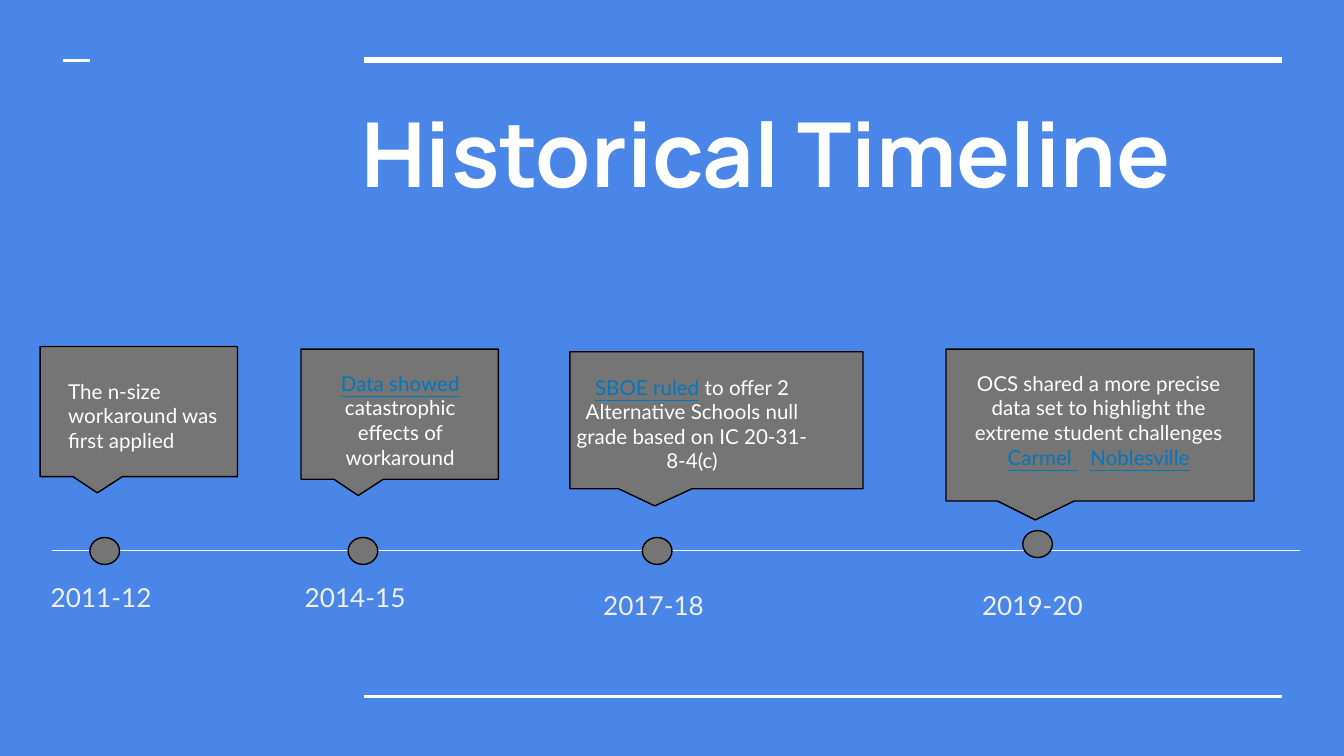
from dataclasses import dataclass

from lxml.etree import SubElement
from pptx import Presentation
from pptx.dml.color import RGBColor
from pptx.enum.shapes import MSO_CONNECTOR, MSO_SHAPE as Shape
from pptx.enum.text import MSO_ANCHOR, MSO_AUTO_SIZE, PP_ALIGN as Align
from pptx.oxml.ns import qn
from pptx.util import Cm, Pt

BLUE, GREY, BLACK, WHITE = "4A86E8", "757575", "000000", "FFFFFF"
LINK, AXIS, DATE = "0277BD", "F3F3F3", "EFEFEF"
Box = tuple[float, float, float, float]  # left, top, width, height in cm


@dataclass
class Run:
    text: str
    link: bool = False
    spacing: float = 0  # extra character spacing in points


@dataclass
class Event:
    date: str
    date_at: tuple[float, float]
    dot_at: tuple[float, float]
    callout: Box
    text_box: Box
    paragraphs: list[list[Run]]
    align: Align = Align.CENTER


EVENTS = [
    Event("2011-12", (0.71, 10.74), (1.7, 10.16),
          (0.76, 6.55, 3.73, 2.46), (1.04, 6.91, 3.86, 1.8),
          [[Run("The n-size workaround was first applied")]], Align.LEFT),
    Event("2014-15", (5.51, 10.74), (6.58, 10.16),
          (5.69, 6.6, 3.73, 2.46), (5.89, 6.76, 3.35, 2.06),
          [[Run("Data showed ", link=True),
            Run("catastrophic effects of workaround")]]),
    Event("2017-18", (11.15, 10.9), (12.14, 10.16),
          (10.77, 6.65, 5.54, 2.59), (10.59, 6.83, 4.98, 2.06),
          [[Run("SBOE ruled", link=True),
            Run(" to offer 2 Alternative Schools null grade "
                "based on IC 20-31-8-4(c)")]]),
    Event("2019-20", (18.31, 10.9), (19.33, 10.03),
          (17.88, 6.6, 5.82, 2.87), (17.88, 6.76, 5.77, 2.06),
          [[Run("OCS shared a more precise data set to highlight "
                "the extreme student challenges")],
           [Run("Carmel ", link=True), Run(" ", spacing=4.25),
            Run("Noblesville", link=True)]]),
]


def rgb(color: str) -> RGBColor:
    return RGBColor.from_string(color)


def cm(*lengths: float) -> list[Cm]:
    return [Cm(v) for v in lengths]


def add_line(slide, x1: float, x2: float, y: float, color: str, width: float):
    line = slide.shapes.add_connector(MSO_CONNECTOR.STRAIGHT, *cm(x1, y, x2, y))
    line.line.color.rgb = rgb(color)
    line.line.width = Pt(width)
    SubElement(line._element.spPr, qn("a:effectLst"))


def add_shape(slide, kind: Shape, box: Box):
    sp = slide.shapes.add_shape(kind, *cm(*box))
    sp.shadow.inherit = False
    sp.fill.solid()
    sp.fill.fore_color.rgb = rgb(GREY)
    sp.line.color.rgb = rgb(BLACK)
    sp.line.width = Pt(0.75)
    return sp


def add_run(p, text: str, font: str, size: float, color: str):
    r = p.add_run()
    r.text = text
    r.font.name = font
    r.font.size = Pt(size)
    r.font.color.rgb = rgb(color)
    return r


def format_frame(tf):
    tf.word_wrap = True
    tf.auto_size = MSO_AUTO_SIZE.NONE
    tf.vertical_anchor = MSO_ANCHOR.TOP
    tf.margin_left = tf.margin_right = Cm(0.25)
    tf.margin_top = tf.margin_bottom = Cm(0.25)


def add_text(slide, box: Box, paragraphs: list[list[Run]], size: float,
             color: str, align: Align = Align.LEFT):
    tf = slide.shapes.add_textbox(*cm(*box)).text_frame
    format_frame(tf)
    for i, runs in enumerate(paragraphs):
        p = tf.add_paragraph() if i else tf.paragraphs[0]
        p.alignment = align
        for run in runs:
            r = add_run(p, run.text, "Lato", size, LINK if run.link else color)
            if run.link:
                r.font.underline = True
            if run.spacing:
                r.font._element.set("spc", str(round(run.spacing * 100)))


def add_event(slide, event: Event):
    add_shape(slide, Shape.OVAL, (*event.dot_at, 0.56, 0.51))
    callout = add_shape(slide, Shape.ROUNDED_RECTANGULAR_CALLOUT, event.callout)
    for i, value in enumerate((-0.21, 0.625, 0)):
        callout.adjustments[i] = value
    add_text(slide, event.text_box, event.paragraphs, 11, WHITE, event.align)
    add_text(slide, (*event.date_at, 2.69, 0.76), [[Run(event.date)]], 14, DATE)


def add_title(slide, text: str):
    title = slide.shapes.title
    title.left, title.top, title.width, title.height = cm(6.58, 1.75, 17.58, 4.29)
    tf = title.text_frame
    format_frame(tf)
    p = tf.paragraphs[0]
    p.alignment = Align.LEFT
    p.line_spacing = 0.95
    add_run(p, text, "Manrope", 48, WHITE).font.bold = True


def main():
    prs = Presentation()
    prs.slide_width, prs.slide_height = cm(25.4, 14.29)
    slide = prs.slides.add_slide(prs.slide_layouts[0])
    slide.background.fill.solid()
    slide.background.fill.fore_color.rgb = rgb(BLUE)

    # Title, without the unused subtitle
    subtitle = slide.placeholders[1]._element
    subtitle.getparent().remove(subtitle)
    add_title(slide, "Historical Timeline")

    # Decorative rules
    add_line(slide, 6.88, 24.23, 1.14, WHITE, 3)
    add_line(slide, 6.88, 24.23, 13.16, WHITE, 1.5)
    add_line(slide, 1.19, 1.7, 1.14, WHITE, 1.5)

    # Timeline
    add_line(slide, 0.99, 24.56, 10.41, AXIS, 0.75)
    for event in EVENTS:
        add_event(slide, event)

    prs.save("out.pptx")


if __name__ == "__main__":
    main()
